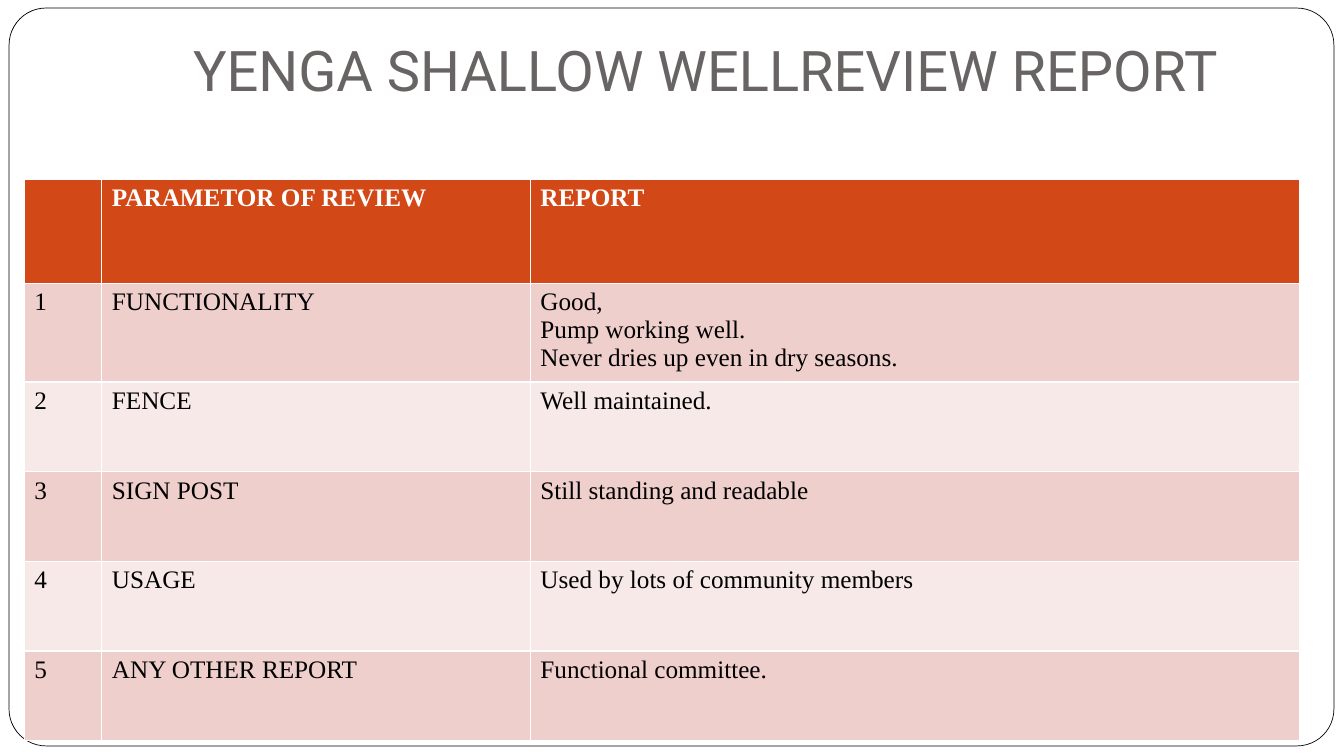
"""Build the shallow well review report slide."""
from dataclasses import dataclass

from pptx import Presentation
from pptx.dml.color import RGBColor
from pptx.enum.shapes import MSO_SHAPE
from pptx.enum.text import MSO_ANCHOR, PP_ALIGN
from pptx.util import Inches, Pt


@dataclass(frozen=True)
class Theme:
    white: RGBColor = RGBColor.from_string("FFFFFF")
    black: RGBColor = RGBColor.from_string("000000")
    title: RGBColor = RGBColor.from_string("696464")
    header: RGBColor = RGBColor.from_string("D34817")
    odd_row: RGBColor = RGBColor.from_string("EFCFCC")
    even_row: RGBColor = RGBColor.from_string("F7E9E8")
    title_font: str = "Roboto"
    table_font: str = "Times New Roman"
    title_size: Pt = Pt(40)
    table_size: Pt = Pt(18)


theme = Theme()
ROWS = [
    ("", "PARAMETOR OF REVIEW", "REPORT"),
    ("1", "FUNCTIONALITY", "Good,\nPump working well.\nNever dries up even in dry seasons."),
    ("2", "FENCE", "Well maintained."),
    ("3", "SIGN POST", "Still standing and readable"),
    ("4", "USAGE", "Used by lots of community members"),
    ("5", "ANY OTHER REPORT", "Functional committee."),
]
COLUMN_WIDTHS = [0.77, 4.25, 7.63]
ROW_HEIGHTS = [1.03, 0.98] + [0.89] * 4

deck = Presentation()
deck.slide_width, deck.slide_height = Inches(13.33), Inches(7.5)
page = deck.slides.add_slide(deck.slide_layouts[5])

frame = page.shapes.add_shape(
    MSO_SHAPE.ROUNDED_RECTANGLE, Inches(0.09), Inches(0.08), Inches(13.14), Inches(7.32))
frame.adjustments[0] = 0.05
frame.shadow.inherit = False
frame.fill.solid()
frame.fill.fore_color.rgb = theme.white
frame.line.color.rgb = theme.black
frame.line.width = Pt(0.5)

title = page.shapes.title
frame.element.getparent().remove(frame.element)
title.element.addprevious(frame.element)
title.left, title.top = Inches(1.33), Inches(0.3)
title.width, title.height = Inches(11.33), Inches(0.82)
title.text = "YENGA SHALLOW WELLREVIEW REPORT"
title.text_frame.vertical_anchor = MSO_ANCHOR.BOTTOM
title.text_frame.margin_bottom = Inches(0.1)
heading = title.text_frame.paragraphs[0]
heading.alignment = PP_ALIGN.CENTER
heading.font.name = theme.title_font
heading.font.size = theme.title_size
heading.font.color.rgb = theme.title

table = page.shapes.add_table(
    len(ROWS), len(COLUMN_WIDTHS), Inches(0.24), Inches(1.78),
    Inches(sum(COLUMN_WIDTHS)), Inches(sum(ROW_HEIGHTS))).table
for column, width in zip(table.columns, COLUMN_WIDTHS):
    column.width = Inches(width)

for number, (row, height, texts) in enumerate(zip(table.rows, ROW_HEIGHTS, ROWS)):
    row.height = Inches(height)
    is_header = number == 0
    band = theme.odd_row if number % 2 else theme.even_row
    for cell, text in zip(row.cells, texts):
        cell.fill.solid()
        cell.fill.fore_color.rgb = theme.header if is_header else band
        cell.text = text
        for para in cell.text_frame.paragraphs:
            para.font.name = theme.table_font
            para.font.size = theme.table_size
            para.font.bold = is_header
            para.font.color.rgb = theme.white if is_header else theme.black

deck.save("out.pptx")
